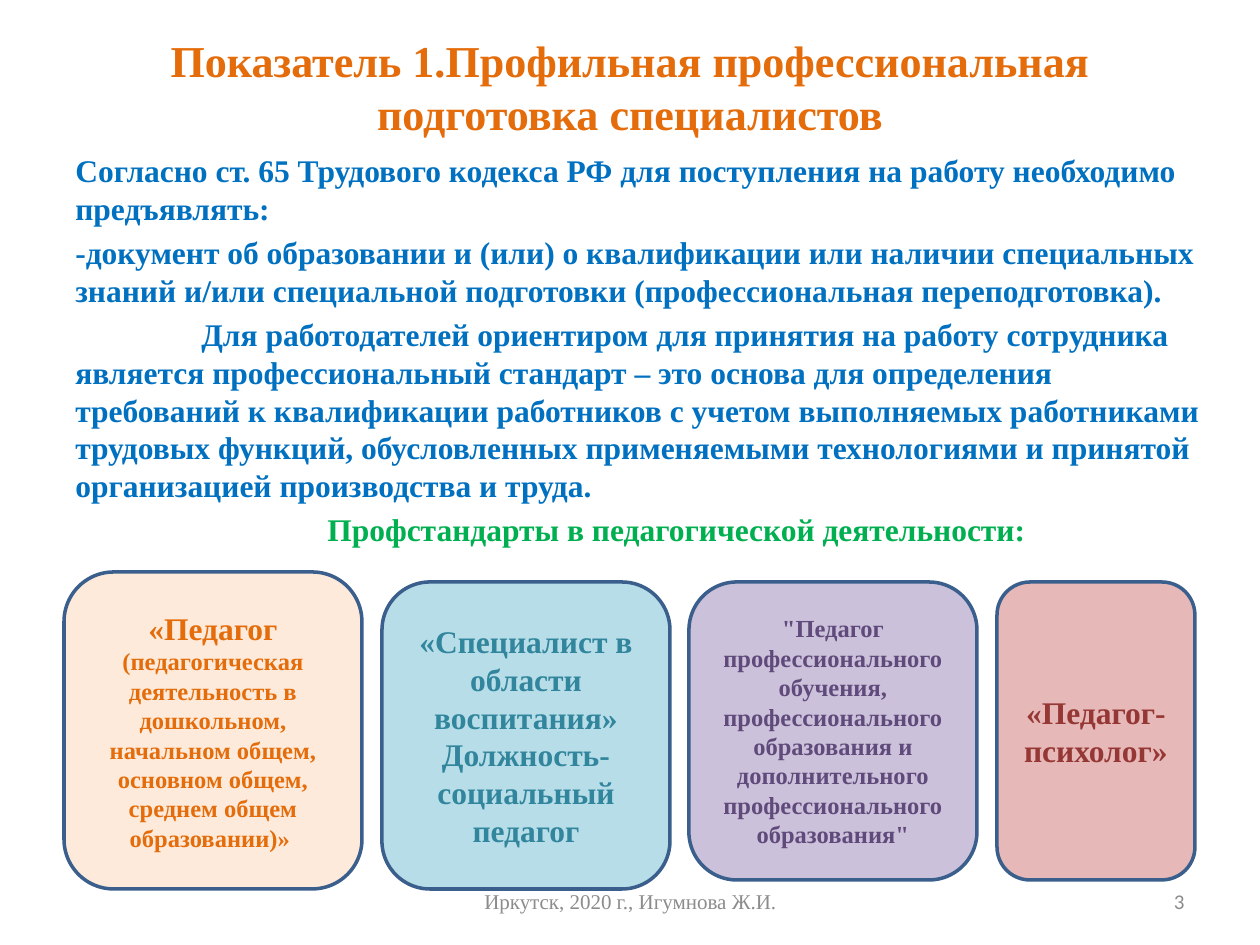
"""Builds the slide on specialist training and teaching standards."""
from pptx import Presentation
from pptx.dml.color import RGBColor
from pptx.enum.shapes import MSO_SHAPE
from pptx.enum.text import MSO_ANCHOR, MSO_AUTO_SIZE, PP_ALIGN
from pptx.util import Inches, Pt

LEFT, CENTER, RIGHT = PP_ALIGN.LEFT, PP_ALIGN.CENTER, PP_ALIGN.RIGHT
TOP, MIDDLE = MSO_ANCHOR.TOP, MSO_ANCHOR.MIDDLE
ROUNDED = MSO_SHAPE.ROUNDED_RECTANGLE
NO_AUTOFIT = MSO_AUTO_SIZE.NONE
SERIF, SANS = "Times New Roman", "Calibri"
PIXELS_PER_INCH = 126
COLORS = {
    "orange": "E46C0A", "blue": "0070C0", "green": "00B050", "gray": "8C8C8C",
    "outline": "3A5F8C", "teal": "31859C", "purple": "604A7B", "red": "953735",
    "peach": "FDEADA", "sky": "B7DEE8", "lilac": "CCC1DA", "pink": "E6B9B8",
}


def px(*lengths):
    return [round(length * Inches(1) / PIXELS_PER_INCH) for length in lengths]


def write(shape, paragraphs, color, align, anchor, bold=True, font=SERIF):
    frame = shape.text_frame
    frame.word_wrap = True
    frame.auto_size = NO_AUTOFIT
    frame.vertical_anchor = anchor
    for index, runs in enumerate(paragraphs):
        paragraph = frame.add_paragraph() if index else frame.paragraphs[0]
        paragraph.alignment = align
        paragraph.font.name = font
        paragraph.font.bold = bold
        paragraph.font.color.rgb = RGBColor.from_string(COLORS[color])
        paragraph.font.size = Pt(runs[0][1])
        for text, size in runs:
            run = paragraph.add_run()
            run.text = text
            if size != runs[0][1]:
                run.font.size = Pt(size)
    return frame.paragraphs


presentation = Presentation()
presentation.slide_width, presentation.slide_height = px(1260, 945)
slide = presentation.slides.add_slide(presentation.slide_layouts[5])

title = slide.shapes.title
title.left, title.top, title.width, title.height = px(63, 38, 1134, 97)
write(title, [[("Показатель 1.Профильная профессиональная подготовка специалистов", 25.2)]],
      "orange", CENTER, MIDDLE)

body = slide.shapes.add_textbox(*px(63, 145, 1172, 735))
body_texts = [
    "Согласно ст. 65 Трудового кодекса РФ для поступления на работу необходимо предъявлять:",
    "-документ об образовании и (или) о квалификации или наличии специальных знаний "
    "и/или специальной подготовки (профессиональная переподготовка).",
    "Для работодателей ориентиром для принятия на работу сотрудника является "
    "профессиональный стандарт – это основа для определения требований к квалификации "
    "работников с учетом выполняемых работниками трудовых функций, обусловленных "
    "применяемыми технологиями и принятой организацией производства и труда.",
    "Профстандарты в педагогической деятельности:",
]
body_paragraphs = write(body, [[(text, 18)] for text in body_texts], "blue", LEFT, TOP)
for paragraph, indent in zip(body_paragraphs, (0, 0, 1, 2)):
    paragraph.space_before = Pt(3.6)
    properties = paragraph._p.get_or_add_pPr()
    properties.set("marL", "0")
    properties.set("indent", str(Inches(indent)))
body_paragraphs[-1].font.color.rgb = RGBColor.from_string(COLORS["green"])

footer = slide.shapes.add_textbox(*px(431, 876, 399, 50))
write(footer, [[("Иркутск, 2020 г., Игумнова Ж.И.", 12)]], "gray", CENTER, MIDDLE, False)
number = slide.shapes.add_textbox(*px(903, 876, 294, 50))
write(number, [[("3", 12)]], "gray", RIGHT, MIDDLE, False, SANS)

cards = [
    (64, 572, 298, 317, "peach", "orange", [[
        ("«Педагог ", 18),
        ("(педагогическая деятельность в дошкольном, начальном общем, "
         "основном общем, среднем общем образовании)» ", 14)]]),
    (382, 582, 288, 307, "sky", "teal", [
        [("«Специалист в области воспитания»", 18)],
        [("Должность- социальный педагог", 18)]]),
    (689, 582, 288, 298, "lilac", "purple", [[
        ("\"Педагог профессионального обучения, профессионального образования и "
         "дополнительного профессионального образования\"", 14)]]),
    (997, 582, 198, 298, "pink", "red", [[("«Педагог-психолог»", 18)]]),
]
for left, top, width, height, fill, color, paragraphs in cards:
    card = slide.shapes.add_shape(ROUNDED, *px(left, top, width, height))
    card.shadow.inherit = False
    card.fill.solid()
    card.fill.fore_color.rgb = RGBColor.from_string(COLORS[fill])
    card.line.color.rgb = RGBColor.from_string(COLORS["outline"])
    card.line.width = Pt(2)
    write(card, paragraphs, color, CENTER, MIDDLE)

presentation.save("out.pptx")
